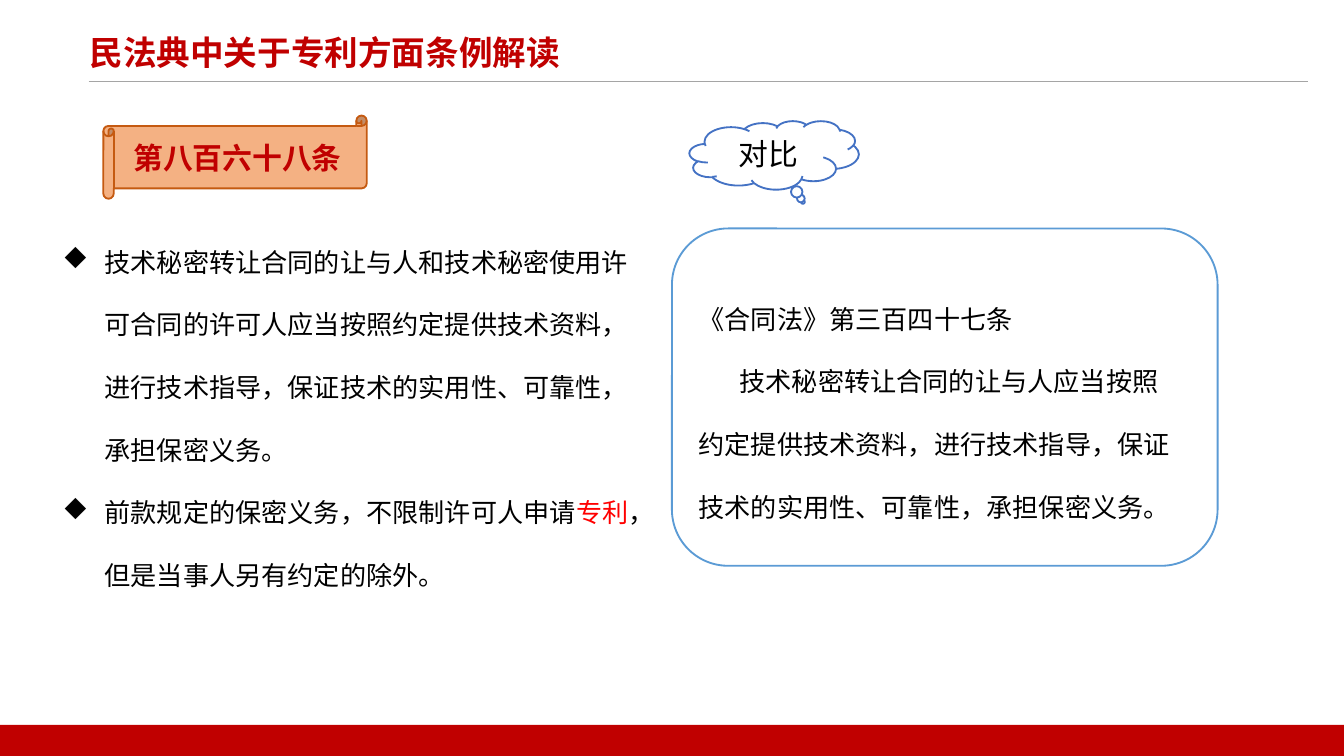
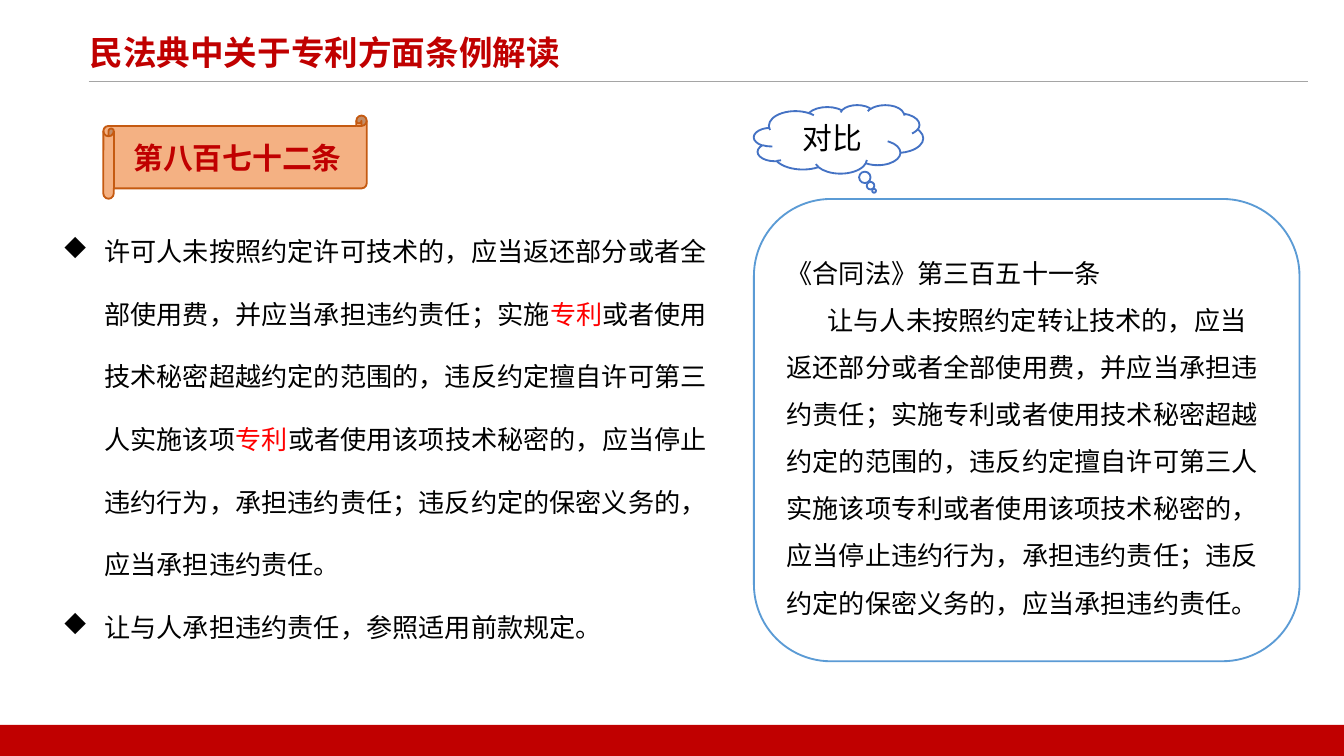
from dataclasses import dataclass

from lxml import etree
from pptx import Presentation
from pptx.dml.color import RGBColor
from pptx.enum.shapes import MSO_CONNECTOR, MSO_SHAPE
from pptx.enum.text import MSO_ANCHOR, PP_ALIGN
from pptx.oxml.ns import qn
from pptx.util import Pt

RECT = MSO_SHAPE.RECTANGLE
ROUND = MSO_SHAPE.ROUNDED_RECTANGLE
SCROLL = MSO_SHAPE.HORIZONTAL_SCROLL
CLOUD = MSO_SHAPE.CLOUD_CALLOUT
LINE = MSO_CONNECTOR.STRAIGHT
LEFT, CENTER = PP_ALIGN.LEFT, PP_ALIGN.CENTER
TOP, MIDDLE = MSO_ANCHOR.TOP, MSO_ANCHOR.MIDDLE


@dataclass(frozen=True)
class Theme:
    font: str = "Noto Sans CJK SC"
    red: str = "C00000"
    mark: str = "FF0000"
    ink: str = "000000"
    paper: str = "FFFFFF"
    rule: str = "A5A5A5"
    scroll: str = "F4B183"
    edge: str = "C55A11"
    cloud: str = "4472C4"
    panel: str = "5B9BD5"
    title: int = 18
    label: int = 16
    body: int = 14
    leading: float = 1.2


THEME = Theme()
TITLE = "民法典中关于专利方面条例解读"
WIDTH, HEIGHT = 720, 405
HANG = 22.5
PAD = 5.4


def rgb(code):
    return RGBColor.from_string(code)


def write(shape, paras, size=THEME.body, color=THEME.ink, bold=False,
          align=LEFT, anchor=TOP, space=None, bullet=False, indent=0, right=PAD):
    frame = shape.text_frame
    frame.word_wrap = True
    frame.vertical_anchor = anchor
    frame.margin_left, frame.margin_right = Pt(PAD), Pt(right)
    frame.margin_top = frame.margin_bottom = Pt(PAD / 2)
    for i, runs in enumerate(paras):
        para = frame.add_paragraph() if i else frame.paragraphs[0]
        para.alignment = align
        if space:
            para.line_spacing = Pt(round(size * THEME.leading * space, 1))
        props = para._p.get_or_add_pPr()
        if bullet:
            props.set("marL", str(Pt(HANG)))
            props.set("indent", str(Pt(-HANG)))
            etree.SubElement(props, qn("a:buFont"), typeface="Wingdings")
            etree.SubElement(props, qn("a:buChar"), char="u")
        elif indent and i:
            props.set("indent", str(Pt(indent)))
        for j, part in enumerate(runs):
            run = para.add_run()
            run.text = part
            font = run.font
            font.name, font.size, font.bold = THEME.font, Pt(size), bold
            font.color.rgb = rgb(THEME.mark if j % 2 else color)
            etree.SubElement(run._r.get_or_add_rPr(), qn("a:ea"), typeface=THEME.font)


def block(slide, kind, box, fill=None, line=None, adjust=()):
    shape = slide.shapes.add_shape(kind, *map(Pt, box))
    shape.shadow.inherit = False
    if fill:
        shape.fill.solid()
        shape.fill.fore_color.rgb = rgb(fill)
    else:
        shape.fill.background()
    if line:
        shape.line.color.rgb = rgb(line)
        shape.line.width = Pt(1)
    else:
        shape.line.fill.background()
    for i, value in enumerate(adjust):
        shape.adjustments[i] = value
    return shape


def label(slide, box, text, **form):
    write(slide.shapes.add_textbox(*map(Pt, box)), text, **form)


def base(deck):
    slide = deck.slides.add_slide(deck.slide_layouts[6])
    slide.background.fill.solid()
    slide.background.fill.fore_color.rgb = rgb(THEME.paper)
    rule = slide.shapes.add_connector(LINE, Pt(47.5), Pt(43.9), Pt(700.6), Pt(43.9))
    rule.line.color.rgb = rgb(THEME.rule)
    rule.line.width = Pt(0.5)
    etree.SubElement(rule._element.spPr, qn("a:effectLst"))
    block(slide, RECT, (0, 388.3, WIDTH, HEIGHT - 388.3), THEME.red)
    label(slide, (42.5, 14.4, 654.5, 25.2), [[TITLE]],
          size=THEME.title, color=THEME.red, bold=True)
    return slide


def banner(slide, text):
    shape = block(slide, SCROLL, (55.4, 61.9, 141.1, 44.6), THEME.scroll, THEME.edge)
    write(shape, [[text]], size=THEME.label, color=THEME.red, bold=True,
          align=CENTER, anchor=MIDDLE)


def cloud(slide, left, top, tail):
    shape = block(slide, CLOUD, (left, top, 90.7, 36.7), THEME.paper, THEME.cloud, tail)
    write(shape, [["对比"]], size=THEME.label, align=CENTER, anchor=MIDDLE)


def panel(slide, box, text, space, right=PAD):
    shape = block(slide, ROUND, box, line=THEME.panel)
    write(shape, text, anchor=MIDDLE, space=space, indent=22, right=right)


def secret(deck):
    slide = base(deck)
    banner(slide, "第八百六十八条")
    label(slide, (28.1, 112.3, 325.4, 204.5), [
        ["技术秘密转让合同的让与人和技术秘密使用许可合同的许可人应当按照约定提供技术资料，"
         "进行技术指导，保证技术的实用性、可靠性，承担保密义务。"],
        ["前款规定的保密义务，不限制许可人申请", "专利", "，但是当事人另有约定的除外。"],
    ], space=2, bullet=True)
    cloud(slide, 369.4, 64.8, (0.17, 0.682))
    panel(slide, (360, 122.4, 292.3, 180.7), [
        ["《合同法》第三百四十七条"],
        ["技术秘密转让合同的让与人应当按照约定提供技术资料，进行技术指导，"
         "保证技术的实用性、可靠性，承担保密义务。"],
    ], space=2, right=12)


def breach(deck):
    slide = base(deck)
    banner(slide, "第八百七十二条")
    label(slide, (28.1, 106.6, 360, 238.3), [
        ["许可人未按照约定许可技术的，应当返还部分或者全部使用费，并应当承担违约责任；实施",
         "专利",
         "或者使用技术秘密超越约定的范围的，违反约定擅自许可第三人实施该项",
         "专利",
         "或者使用该项技术秘密的，应当停止违约行为，承担违约责任；"
         "违反约定的保密义务的，应当承担违约责任。"],
        ["让与人承担违约责任，参照适用前款规定。"],
    ], space=2, bullet=True)
    cloud(slide, 403.9, 56.2, (0.21, 0.754))
    panel(slide, (403.9, 106.6, 292.3, 247.7), [
        ["《合同法》第三百五十一条"],
        ["让与人未按照约定转让技术的，应当返还部分或者全部使用费，并应当承担违约责任；"
         "实施专利或者使用技术秘密超越约定的范围的，违反约定擅自许可第三人实施该项专利"
         "或者使用该项技术秘密的，应当停止违约行为，承担违约责任；"
         "违反约定的保密义务的，应当承担违约责任。"],
    ], space=1.5)


def main():
    deck = Presentation()
    deck.slide_width, deck.slide_height = Pt(WIDTH), Pt(HEIGHT)
    secret(deck)
    breach(deck)
    deck.save("out.pptx")


if __name__ == "__main__":
    main()
